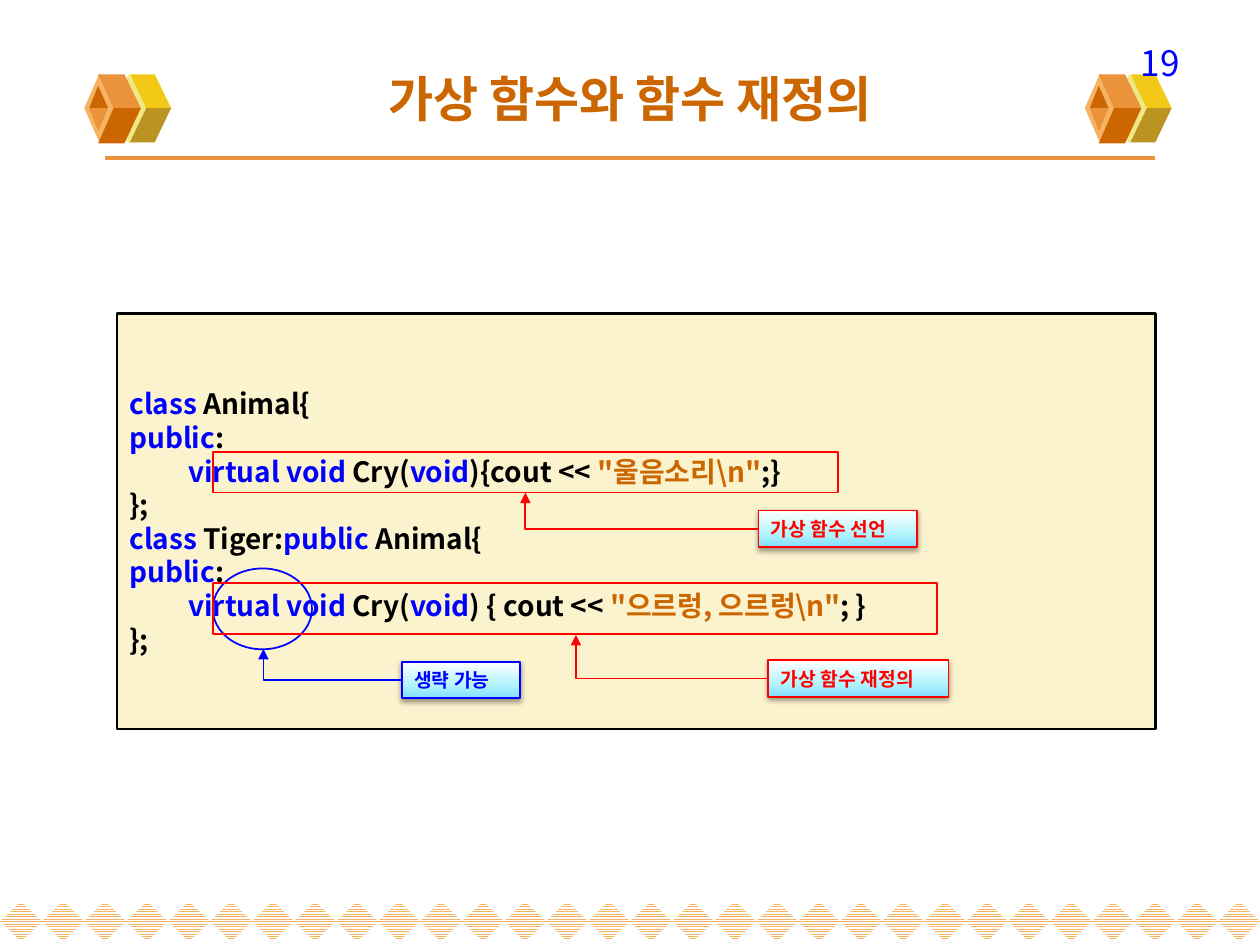
from copy import deepcopy
from typing import NamedTuple

from lxml.etree import SubElement
from pptx import Presentation
from pptx.dml.color import RGBColor
from pptx.enum.dml import MSO_PATTERN
from pptx.enum.shapes import MSO_CONNECTOR, MSO_SHAPE
from pptx.enum.text import MSO_ANCHOR, PP_ALIGN
from pptx.oxml.ns import qn
from pptx.util import Cm, Pt

FONT = "Noto Sans CJK KR"
BLACK = RGBColor(0x00, 0x00, 0x00)
WHITE = RGBColor(0xFF, 0xFF, 0xFF)
BLUE = RGBColor(0x00, 0x00, 0xFF)
RED = RGBColor(0xFF, 0x00, 0x00)
RUST = RGBColor(0xCC, 0x66, 0x00)
ORANGE = RGBColor(0xEB, 0x93, 0x3B)
APRICOT = RGBColor(0xF5, 0xB3, 0x63)
YELLOW = RGBColor(0xF3, 0xC9, 0x17)
OLIVE = RGBColor(0xBB, 0x93, 0x21)
LEMON = RGBColor(0xF1, 0xE7, 0x85)
CREAM = RGBColor(0xFB, 0xF2, 0xCE)
SKY = RGBColor(0x81, 0xDE, 0xFF)
PALE_SKY = RGBColor(0xB2, 0xF3, 0xFC)

PAGE_WIDTH, PAGE_HEIGHT = 25.4, 19.05
DIAMOND_COUNT = 30
BADGE_OFFSETS = (0, 20.17)
CODE_INDENT = 1.19
LABEL_HEIGHT = 0.74


class Box(NamedTuple):
    """Left, top, width and height in centimetres."""
    left: float
    top: float
    width: float
    height: float


class Facet(NamedTuple):
    color: RGBColor
    points: list[tuple[float, float]]


class Span(NamedTuple):
    text: str
    color: RGBColor = BLACK


class CodeLine(NamedTuple):
    spans: list[Span]
    indented: bool = False


class Marker(NamedTuple):
    kind: MSO_SHAPE
    color: RGBColor
    box: Box


class Callout(NamedTuple):
    text: str
    color: RGBColor
    box: Box
    target: tuple[float, float]


BADGE_DIAMONDS = [(LEMON, Box(2.18, 1.5, 0.84, 1.4)), (APRICOT, Box(1.7, 1.48, 0.61, 1.4))]
BADGE_FACETS = [
    Facet(YELLOW, [(2.95, 2.18), (3.45, 2.18), (3.12, 1.5), (2.62, 1.5)]),
    Facet(OLIVE, [(2.95, 2.18), (3.45, 2.18), (3.12, 2.87), (2.62, 2.87)]),
    Facet(ORANGE, [(2.29, 2.18), (2.84, 2.18), (2.51, 1.5), (1.98, 1.5)]),
    Facet(RUST, [(2.29, 2.18), (2.84, 2.18), (2.51, 2.89), (1.98, 2.89)]),
    Facet(RUST, [(1.98, 1.73), (1.8, 2.18), (2.18, 2.18)]),
    Facet(ORANGE, [(1.98, 2.64), (1.8, 2.18), (2.18, 2.18)]),
]

PUBLIC_LINE = CodeLine([Span("public", BLUE), Span(":")])
CLOSING_LINE = CodeLine([Span("};")])
CODE = [
    CodeLine([Span("class", BLUE), Span(" Animal{")]),
    PUBLIC_LINE,
    CodeLine([Span("virtual void", BLUE), Span(" Cry("), Span("void", BLUE),
              Span("){cout << "), Span('"울음소리\\n"', RUST), Span(";}")], True),
    CLOSING_LINE,
    CodeLine([Span("class ", BLUE), Span("Tiger:"), Span("public", BLUE), Span(" Animal{")]),
    PUBLIC_LINE,
    CodeLine([Span("virtual void", BLUE), Span(" Cry("), Span("void", BLUE),
              Span(") { cout << "), Span('"으르렁, 으르렁\\n"', RUST), Span("; }")], True),
    CLOSING_LINE,
]
MARKERS = [
    Marker(MSO_SHAPE.RECTANGLE, RED, Box(4.29, 9.12, 12.6, 0.81)),
    Marker(MSO_SHAPE.OVAL, BLUE, Box(4.29, 11.46, 2.0, 1.63)),
    Marker(MSO_SHAPE.RECTANGLE, RED, Box(4.29, 11.76, 14.6, 1.02)),
]
CALLOUTS = [
    Callout("가상 함수 선언", RED, Box(15.29, 10.29, 3.2, LABEL_HEIGHT), (10.59, 9.93)),
    Callout("가상 함수 재정의", RED, Box(15.49, 13.31, 3.63, LABEL_HEIGHT), (11.61, 12.8)),
    Callout("생략 가능", BLUE, Box(8.1, 13.34, 2.39, LABEL_HEIGHT), (5.31, 13.08)),
]


def lengths(box: Box) -> list[Cm]:
    return [Cm(value) for value in box]


def write(para, spans: list[Span], size: float, bold: bool, align: PP_ALIGN) -> None:
    para.alignment = align
    para.font.name, para.font.size, para.font.bold = FONT, Pt(size), bold
    defaults = para._p.get_or_add_pPr().find(qn("a:defRPr"))
    SubElement(defaults, qn("a:ea"), typeface=FONT)
    for span in spans:
        run = para.add_run()
        run.text = span.text
        run.font.color.rgb = span.color


def add_outlined(page, kind: MSO_SHAPE, box: Box, color: RGBColor, weight: float = 1):
    """Add an unfilled preset shape with a coloured outline."""
    shape = page.shapes.add_shape(kind, *lengths(box))
    shape.fill.background()
    shape.line.color.rgb = color
    shape.line.width = Pt(weight)
    shape.shadow.inherit = False
    return shape


def paint(shape, color: RGBColor) -> None:
    shape.fill.solid()
    shape.fill.fore_color.rgb = color
    shape.line.fill.background()
    shape.shadow.inherit = False


def add_footer_diamonds(page) -> None:
    pitch = PAGE_WIDTH / DIAMOND_COUNT
    for index in range(DIAMOND_COUNT):
        box = Box(index * pitch, 18.17, pitch, 0.81)
        diamond = page.shapes.add_shape(MSO_SHAPE.DIAMOND, *lengths(box))
        diamond.fill.patterned()
        diamond.fill.pattern = MSO_PATTERN.NARROW_HORIZONTAL
        diamond.fill.fore_color.rgb = APRICOT
        diamond.fill.back_color.rgb = WHITE
        diamond.line.fill.background()
        diamond.shadow.inherit = False


def add_badge(page, offset: float) -> None:
    for color, box in BADGE_DIAMONDS:
        moved = box._replace(left=box.left + offset)
        paint(page.shapes.add_shape(MSO_SHAPE.DIAMOND, *lengths(moved)), color)
    for facet in BADGE_FACETS:
        points = [(Cm(x + offset), Cm(y)) for x, y in facet.points]
        builder = page.shapes.build_freeform(*points[0])
        builder.add_line_segments(points[1:])
        paint(builder.convert_to_shape(), facet.color)


def add_line(page, kind: MSO_CONNECTOR, ends: list[float], color: RGBColor, weight: float):
    line = page.shapes.add_connector(kind, *[Cm(value) for value in ends])
    line.line.color.rgb = color
    line.line.width = Pt(weight)
    SubElement(line._element.spPr, qn("a:effectLst"))
    return line


def add_header(page) -> None:
    add_line(page, MSO_CONNECTOR.STRAIGHT, [2.12, 3.18, 23.28, 3.18], ORANGE, 2.25)
    for offset in BADGE_OFFSETS:
        add_badge(page, offset)
    number = page.shapes.add_textbox(*lengths(Box(18.11, 0.71, 5.92, 0.76)))
    number.text_frame.word_wrap = True
    write(number.text_frame.paragraphs[0], [Span("19", BLUE)], 20, False, PP_ALIGN.RIGHT)
    title = page.shapes.title
    title.left, title.top, title.width, title.height = lengths(Box(1.27, 0.76, 22.86, 2.41))
    title.text_frame.vertical_anchor = MSO_ANCHOR.MIDDLE
    heading = [Span("가상 함수와 함수 재정의", RUST)]
    write(title.text_frame.paragraphs[0], heading, 28, True, PP_ALIGN.CENTER)


def add_code_panel(page) -> None:
    panel = add_outlined(page, MSO_SHAPE.RECTANGLE, Box(2.36, 6.32, 20.93, 8.38), BLACK, 1.5)
    panel.fill.solid()
    panel.fill.fore_color.rgb = CREAM
    frame = panel.text_frame
    frame.word_wrap = True
    frame.vertical_anchor = MSO_ANCHOR.MIDDLE
    for index, line in enumerate(CODE):
        para = frame.add_paragraph() if index else frame.paragraphs[0]
        para.line_spacing = Pt(19.2)
        write(para, line.spans, 16, True, PP_ALIGN.LEFT)
        if line.indented:
            para._p.get_or_add_pPr().set("marL", str(Cm(CODE_INDENT)))


def add_label(page, callout: Callout) -> None:
    label = add_outlined(page, MSO_SHAPE.RECTANGLE, callout.box, callout.color)
    label.fill.gradient()
    label.fill.gradient_angle = 90
    stop_list = label._element.spPr.find(".//" + qn("a:gsLst"))
    stop_list.insert(1, deepcopy(stop_list[0]))
    stops = [(0, SKY), (0.35, PALE_SKY), (1, WHITE)]
    for stop, (position, color) in zip(label.fill.gradient_stops, stops):
        stop.position = position
        stop.color.rgb = color
    effects = label._element.spPr.find(qn("a:effectLst"))
    shadow = SubElement(effects, qn("a:outerShdw"), blurRad=str(Pt(3.1)), dist=str(Pt(1.6)),
                        dir="5400000", rotWithShape="0")
    tint = SubElement(shadow, qn("a:srgbClr"), val=str(BLACK))
    SubElement(tint, qn("a:alpha"), val="38000")
    label.text_frame.word_wrap = True
    label.text_frame.vertical_anchor = MSO_ANCHOR.MIDDLE
    spans = [Span(callout.text, callout.color)]
    write(label.text_frame.paragraphs[0], spans, 11, True, PP_ALIGN.JUSTIFY)


def add_arrow(page, callout: Callout) -> None:
    """Run left from the label, then up to its target."""
    ends = [*callout.target, callout.box.left, callout.box.top + callout.box.height / 2]
    arrow = add_line(page, MSO_CONNECTOR.ELBOW, ends, callout.color, 1)
    properties = arrow._element.spPr
    properties.find(qn("a:xfrm")).set("rot", "10800000")
    properties.find(qn("a:prstGeom")).set("prst", "bentConnector2")
    SubElement(properties.find(qn("a:ln")), qn("a:tailEnd"), type="triangle")


def main() -> None:
    deck = Presentation()
    deck.slide_width, deck.slide_height = Cm(PAGE_WIDTH), Cm(PAGE_HEIGHT)
    page = deck.slides.add_slide(deck.slide_layouts[5])
    add_footer_diamonds(page)
    add_header(page)
    add_code_panel(page)
    for marker in MARKERS:
        add_outlined(page, marker.kind, marker.box, marker.color)
    for callout in CALLOUTS:
        add_label(page, callout)
        add_arrow(page, callout)
    deck.save("out.pptx")


if __name__ == "__main__":
    main()
